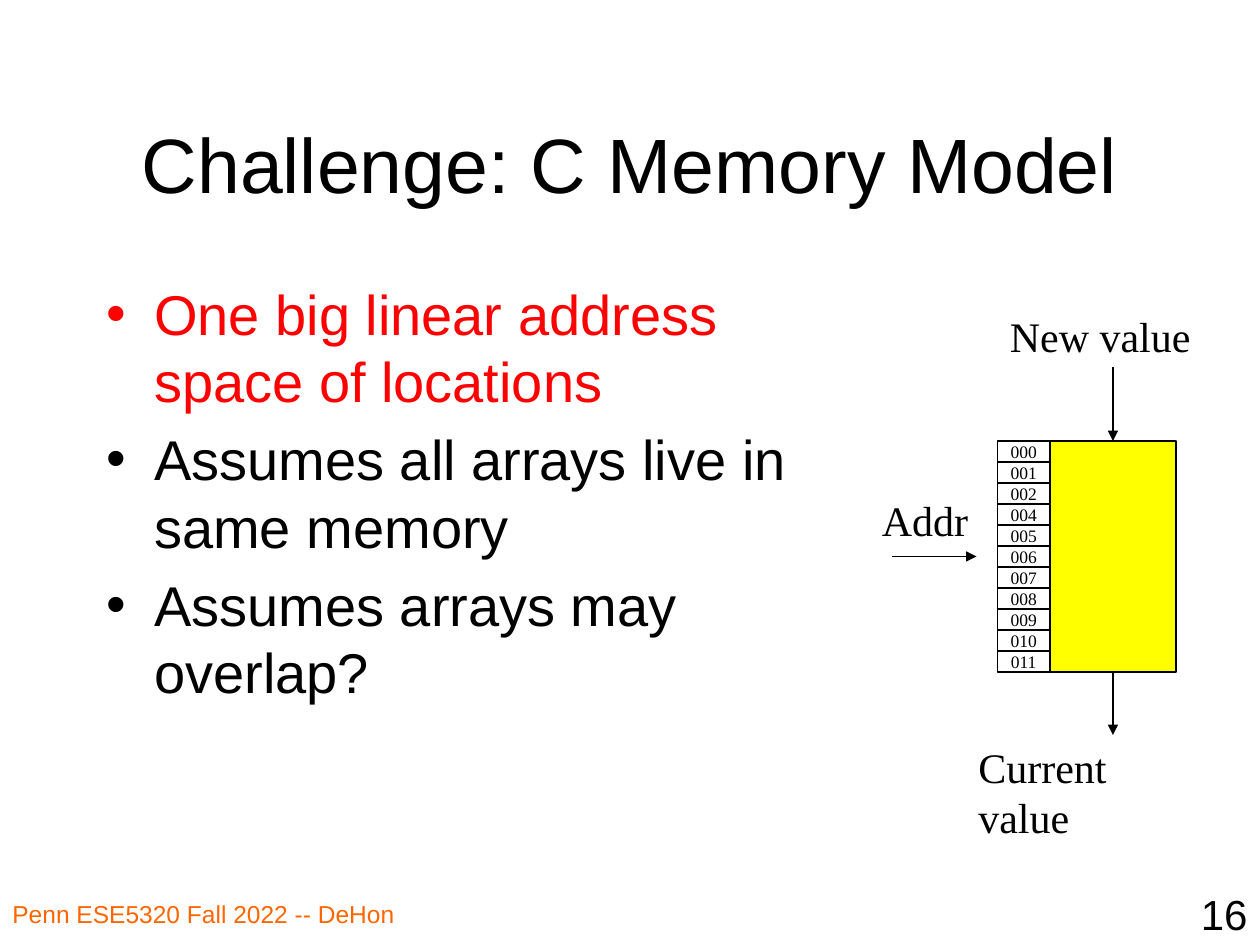
from pptx import Presentation
from pptx.dml.color import RGBColor
from pptx.enum.shapes import MSO_CONNECTOR as Connector, MSO_SHAPE as Shape
from pptx.enum.text import MSO_ANCHOR as Anchor, MSO_AUTO_SIZE as AutoSize, PP_ALIGN as Align
from pptx.oxml.ns import qn
from pptx.util import Inches, Pt
from lxml.etree import SubElement

BLACK = RGBColor(0x00, 0x00, 0x00)
WHITE = RGBColor(0xFF, 0xFF, 0xFF)
RED = RGBColor(0xFF, 0x00, 0x00)
ORANGE = RGBColor(0xFF, 0x66, 0x00)
YELLOW = RGBColor(0xFF, 0xFF, 0x00)
SANS, SERIF = "Arial", "Times New Roman"

COLUMNS, ROWS = 120, 90
UNIT = Inches(10) // COLUMNS

ADDRESSES = ["000", "001", "002", "004", "005", "006", "007", "008", "009", "010", "011"]
MEMORY_LEFT, MEMORY_TOP, MEMORY_WIDTH = 100, 42, 12
CELL_WIDTH, CELL_HEIGHT = 5, 2
MEMORY_BOTTOM = MEMORY_TOP + CELL_HEIGHT * len(ADDRESSES)
MEMORY_CENTER = MEMORY_LEFT + MEMORY_WIDTH // 2

POINTS = [
    ("One big linear address space of locations", RED),
    ("Assumes all arrays live in same memory", BLACK),
    ("Assumes arrays may overlap?", BLACK),
]


def grid(*cells):
    return [round(cell * UNIT) for cell in cells]


def style(paragraph, size, font, color=BLACK, align=Align.LEFT):
    paragraph.alignment = align
    for run in paragraph.runs:
        run.font.size = Pt(size)
        run.font.name = font
        run.font.color.rgb = color


def add_title(slide, text):
    title = slide.shapes.title
    title.left, title.top, title.width, title.height = grid(9, 8, 102, 15)
    frame = title.text_frame
    frame.text = text
    frame.auto_size = AutoSize.NONE
    frame.vertical_anchor = Anchor.MIDDLE
    style(frame.paragraphs[0], 44, SANS, align=Align.CENTER)


def add_label(slide, text, cells, size, font, color=BLACK, align=Align.LEFT, wrap=False):
    frame = slide.shapes.add_textbox(*grid(*cells)).text_frame
    frame.word_wrap = wrap
    frame.text = text
    style(frame.paragraphs[0], size, font, color, align)


def add_bullets(slide, points, cells):
    frame = slide.shapes.add_textbox(*grid(*cells)).text_frame
    frame.word_wrap = True
    frame.text = "\n".join(text for text, _ in points)
    for paragraph, (_, color) in zip(frame.paragraphs, points):
        style(paragraph, 32, SANS, color)
        paragraph.space_before = Pt(6.4)
        properties = paragraph._p.get_or_add_pPr()
        properties.set("marL", str(Inches(0.375)))
        properties.set("indent", str(-Inches(0.375)))
        SubElement(properties, qn("a:buFont"), typeface=SANS)
        SubElement(properties, qn("a:buChar"), char="•")


def add_block(slide, cells, fill, text=""):
    block = slide.shapes.add_shape(Shape.RECTANGLE, *grid(*cells))
    block.shadow.inherit = False
    block.fill.solid()
    block.fill.fore_color.rgb = fill
    block.line.color.rgb = BLACK
    block.line.width = Pt(0.75)
    if text:
        frame = block.text_frame
        frame.text = text
        frame.word_wrap = False
        frame.vertical_anchor = Anchor.MIDDLE
        style(frame.paragraphs[0], 10, SERIF, align=Align.CENTER)
    return block


def add_arrow(slide, start, end):
    arrow = slide.shapes.add_connector(Connector.STRAIGHT, *grid(*start, *end))
    arrow.line.color.rgb = BLACK
    arrow.line.width = Pt(0.75)
    SubElement(arrow.line._get_or_add_ln(), qn("a:tailEnd"), type="triangle")
    SubElement(arrow._element.spPr, qn("a:effectLst"))
    return arrow


def add_memory(slide):
    memory = add_block(
        slide, (MEMORY_LEFT, MEMORY_TOP, MEMORY_WIDTH, MEMORY_BOTTOM - MEMORY_TOP), YELLOW)
    write = add_arrow(slide, (MEMORY_CENTER, 35), (MEMORY_CENTER, MEMORY_TOP))
    write.end_connect(memory, 0)
    add_arrow(slide, (85, 53), (93, 53))
    read = add_arrow(slide, (MEMORY_CENTER, MEMORY_BOTTOM), (MEMORY_CENTER, 70))
    read.begin_connect(memory, 2)
    for row, address in enumerate(ADDRESSES):
        top = MEMORY_TOP + row * CELL_HEIGHT
        add_block(slide, (MEMORY_LEFT - CELL_WIDTH, top, CELL_WIDTH, CELL_HEIGHT), WHITE, address)
    add_label(slide, "Addr", (82.8, 46.5, 10.7, 6), 24, SERIF)
    add_label(slide, "New value", (95, 29, 19.7, 6), 24, SERIF)
    add_label(slide, "Current value", (92, 70, 24.2, 6), 24, SERIF)


def main():
    deck = Presentation()
    deck.slide_width, deck.slide_height = grid(COLUMNS, ROWS)
    slide = deck.slides.add_slide(deck.slide_layouts[5])
    add_label(slide, "Penn ESE5320 Fall 2022 -- DeHon", (0, 85, 46, 5), 14, SANS, ORANGE, wrap=True)
    add_label(slide, "16", (95, 84, 25, 6), 24, SANS, align=Align.RIGHT, wrap=True)
    add_title(slide, "Challenge: C Memory Model")
    add_bullets(slide, POINTS, (9, 26, 73, 54))
    add_memory(slide)
    deck.save("out.pptx")


if __name__ == "__main__":
    main()
